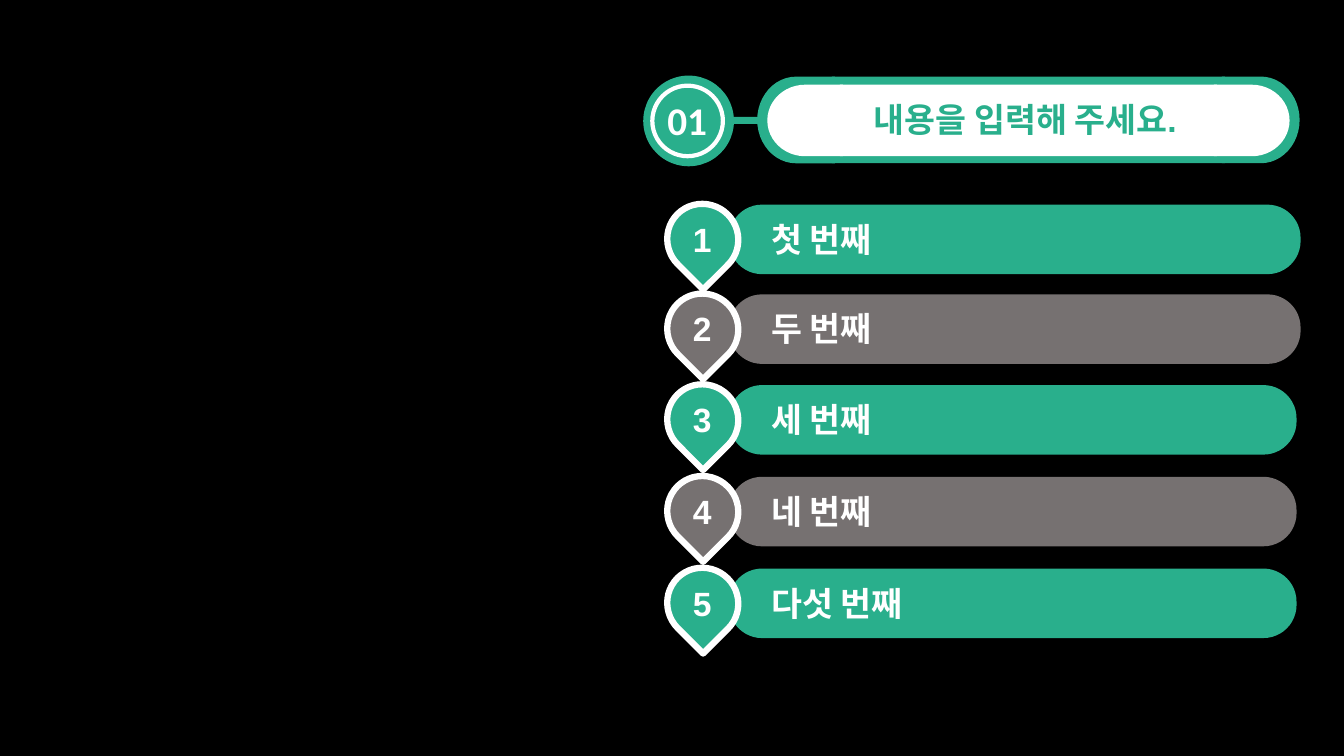
from pptx import Presentation
from pptx.dml.color import RGBColor
from pptx.enum.shapes import MSO_SHAPE
from pptx.enum.text import MSO_ANCHOR, MSO_AUTO_SIZE, PP_ALIGN
from pptx.util import Inches, Pt

BLACK = RGBColor(0x00, 0x00, 0x00)
WHITE = RGBColor(0xFF, 0xFF, 0xFF)
GREEN = RGBColor(0x29, 0xAF, 0x8C)
GRAY = RGBColor(0x76, 0x71, 0x71)

ROWS = [
    ("첫 번째", 2.03, 5.67),
    ("두 번째", 2.92, 5.67),
    ("세 번째", 3.82, 5.63),
    ("네 번째", 4.73, 5.63),
    ("다섯 번째", 5.64, 5.63),
]


class AgendaSlide:
    def __init__(self, prs):
        self.s = prs.slides.add_slide(prs.slide_layouts[5])
        self.s.background.fill.solid()
        self.s.background.fill.fore_color.rgb = BLACK

    def shape(self, kind, box, fill=None, line=None, weight=0, rotation=0, parent=None):
        shapes = (parent or self.s).shapes
        sp = shapes.add_shape(kind, *map(Inches, box))
        sp.shadow.inherit = False
        sp.rotation = rotation
        if fill is None:
            sp.fill.background()
        else:
            sp.fill.solid()
            sp.fill.fore_color.rgb = fill
        if line is None:
            sp.line.fill.background()
        else:
            sp.line.color.rgb = line
            sp.line.width = Pt(weight)
        return sp

    def pill(self, left, top, width, height, cap, fill):
        group = self.s.shapes.add_group_shape()
        right = left + width - cap
        delay = MSO_SHAPE.FLOWCHART_DELAY
        self.shape(delay, (right, top, cap, height), fill, parent=group)
        middle = (left + cap - 0.03, top, width - 2 * cap + 0.06, height)
        self.shape(MSO_SHAPE.RECTANGLE, middle, fill, parent=group)
        self.shape(delay, (left, top, cap, height), fill, rotation=180, parent=group)

    def fill_text(self, sp, text, size=24, font="Arial", color=WHITE, align=PP_ALIGN.CENTER):
        tf = sp.text_frame
        frame = {
            "word_wrap": True,
            "auto_size": MSO_AUTO_SIZE.SHAPE_TO_FIT_TEXT,
            "vertical_anchor": MSO_ANCHOR.TOP,
        }
        for name, value in frame.items():
            setattr(tf, name, value)
        p = tf.paragraphs[0]
        p.alignment = align
        r = p.add_run()
        r.text = text
        for name, value in {"name": font, "size": Pt(size), "bold": True}.items():
            setattr(r.font, name, value)
        r.font.color.rgb = color

    def text(self, box, text, **style):
        self.fill_text(self.s.shapes.add_textbox(*map(Inches, box)), text, **style)

    def title(self, box, text, **style):
        sp = self.s.shapes.title
        for name, value in zip(("left", "top", "width", "height"), box):
            setattr(sp, name, Inches(value))
        self.fill_text(sp, text, **style)
        self.s.shapes._spTree.append(sp._element)

    def header(self, number, text):
        self.shape(MSO_SHAPE.FLOWCHART_TERMINATOR, (6.95, 1.16, 0.78, 0.07), GREEN)
        self.pill(7.51, 0.76, 5.38, 0.86, 0.77, GREEN)
        self.pill(7.61, 0.84, 5.18, 0.71, 0.75, WHITE)
        self.shape(MSO_SHAPE.OVAL, (6.38, 0.75, 0.9, 0.9), GREEN)
        self.shape(MSO_SHAPE.OVAL, (6.47, 0.85, 0.7, 0.7), line=WHITE, weight=3)
        self.title((7.78, 0.93, 4.78, 0.5), text, color=GREEN)
        self.text((6.47, 0.91, 0.69, 0.57), number, size=28, font="Calibri")

    def row(self, number, label, top, width):
        fill = GREEN if number % 2 else GRAY
        bar = self.shape(MSO_SHAPE.ROUNDED_RECTANGLE, (7.23, top, width, 0.69), fill)
        bar.adjustments[0] = 0.477
        self.shape(MSO_SHAPE.TEAR, (6.62, top - 0.01, 0.7, 0.71), fill, WHITE, 4.5, 135)
        self.text((6.7, top + 0.09, 0.53, 0.5), str(number))
        self.text((7.55, top + 0.09, width - 0.62, 0.5), label,
                  font="Calibri", align=PP_ALIGN.LEFT)


def main():
    prs = Presentation()
    prs.slide_width, prs.slide_height = Inches(13.33), Inches(7.5)
    slide = AgendaSlide(prs)
    slide.header("01", "내용을 입력해 주세요.")
    for number, (label, top, width) in enumerate(ROWS, 1):
        slide.row(number, label, top, width)
    prs.save("out.pptx")


if __name__ == "__main__":
    main()
